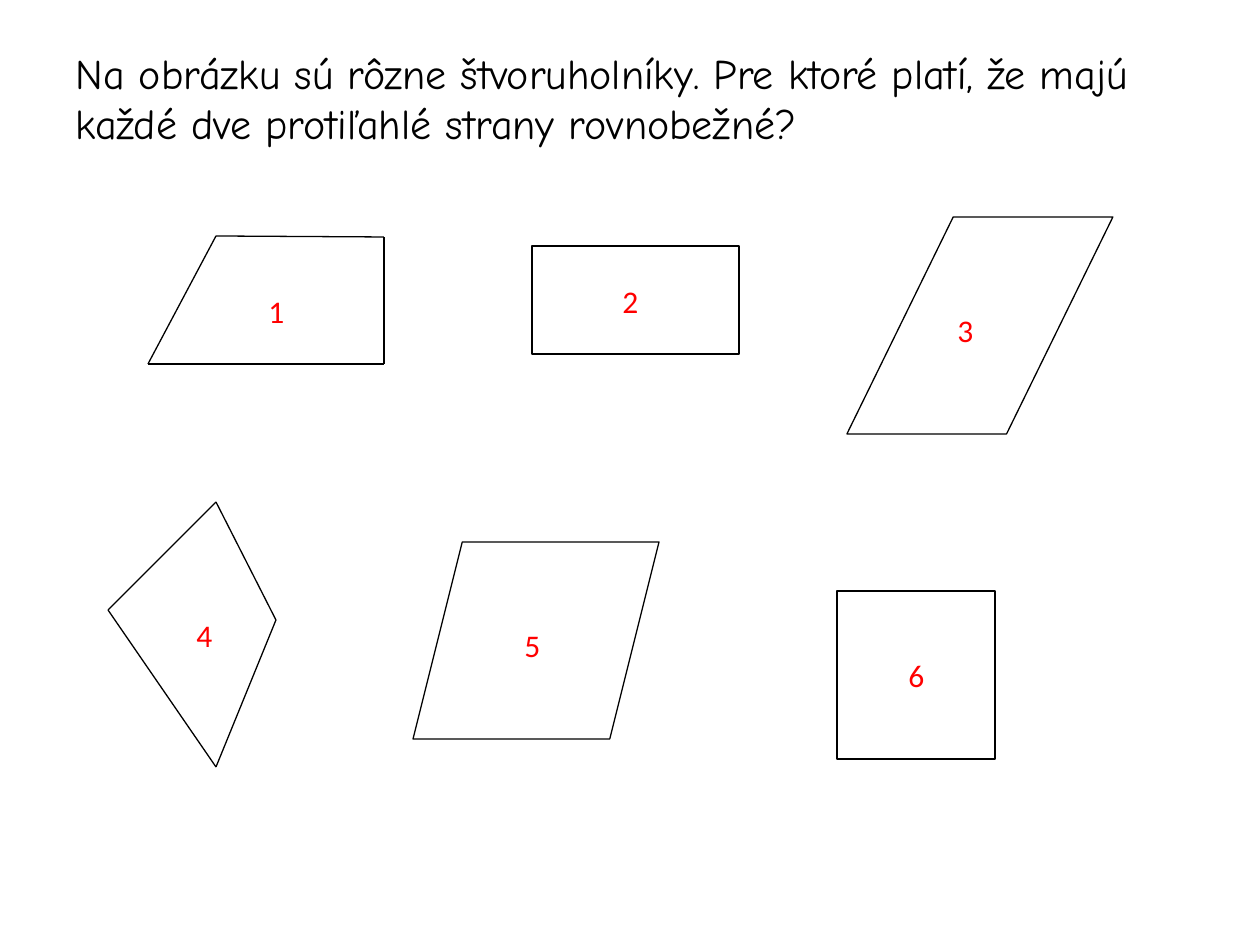
from pptx import Presentation
from pptx.dml.color import RGBColor as Rgb
from pptx.enum.shapes import MSO_CONNECTOR as Link, MSO_SHAPE as Kind
from pptx.enum.text import MSO_ANCHOR as Anchor, MSO_AUTO_SIZE as Fit, PP_ALIGN as Align
from pptx.util import Pt
from lxml.etree import SubElement

SCALE = 914400 / 126
INK = {"black": "000000", "red": "FF0000"}
TITLE = ("Na obrázku sú rôzne štvoruholníky. Pre ktoré platí, "
         "že majú každé dve protiľahlé strany rovnobežné?")
SIDES = [
    [(148, 364), (384, 364), (384, 237), (216, 236)],
    [(108, 610), (216, 767), (276, 620), (216, 502)],
]
FORMS = [
    (Kind.RECTANGLE, (532, 246, 207, 108), None),
    (Kind.PARALLELOGRAM, (847, 217, 266, 217), 0.49),
    (Kind.PARALLELOGRAM, (413, 542, 246, 197), 0.25),
    (Kind.RECTANGLE, (837, 591, 158, 168), None),
]
SPOTS = [(256, 286), (610, 276), (945, 305), (184, 610), (512, 620), (896, 650)]


def emu(*nums):
    """Turn px lengths into EMU."""
    return [round(num * SCALE) for num in nums]


def write(frame, text, font="Calibri", size=18, ink="red", wrap=False,
          fit=Fit.SHAPE_TO_FIT_TEXT, anchor=Anchor.TOP):
    """Fill a text frame with one formatted run."""
    frame.word_wrap = wrap
    frame.auto_size = fit
    frame.vertical_anchor = anchor
    para = frame.paragraphs[0]
    para.alignment = Align.LEFT
    run = para.add_run()
    run.text = text
    run.font.name = font
    run.font.size = Pt(size)
    run.font.color.rgb = Rgb.from_string(INK[ink])


def stroke(line):
    """Give a line the thin black look."""
    line.color.rgb = Rgb.from_string(INK["black"])
    line.width = Pt(0.75)


def head(slide):
    """Place the question in the title."""
    title = slide.shapes.title
    title.left, title.top, title.width, title.height = emu(63, 38, 1134, 120)
    write(title.text_frame, TITLE, font="Comic Neue", size=24, ink="black",
          wrap=True, fit=Fit.NONE, anchor=Anchor.MIDDLE)


def outline(slide, points):
    """Draw a closed outline from straight sides."""
    for start, end in zip(points, points[1:] + points[:1]):
        side = slide.shapes.add_connector(Link.STRAIGHT, *emu(*start, *end))
        stroke(side.line)
        props = side.element.spPr
        SubElement(props, f"{{{props.nsmap['a']}}}effectLst")


def form(slide, kind, box, slant):
    """Draw an unfilled preset quadrilateral."""
    shape = slide.shapes.add_shape(kind, *emu(*box))
    shape.shadow.inherit = False
    shape.fill.background()
    stroke(shape.line)
    if slant is not None:
        shape.adjustments[0] = slant


def label(slide, num, spot):
    """Place a red number."""
    box = slide.shapes.add_textbox(*emu(*spot, 42, 50))
    write(box.text_frame, str(num))


def main():
    """Build the slide and save it."""
    deck = Presentation()
    deck.slide_width, deck.slide_height = emu(1260, 945)
    slide = deck.slides.add_slide(deck.slide_layouts[5])
    head(slide)
    for points in SIDES:
        outline(slide, points)
    for item in FORMS:
        form(slide, *item)
    for num, spot in enumerate(SPOTS, 1):
        label(slide, num, spot)
    deck.save("out.pptx")


if __name__ == "__main__":
    main()
